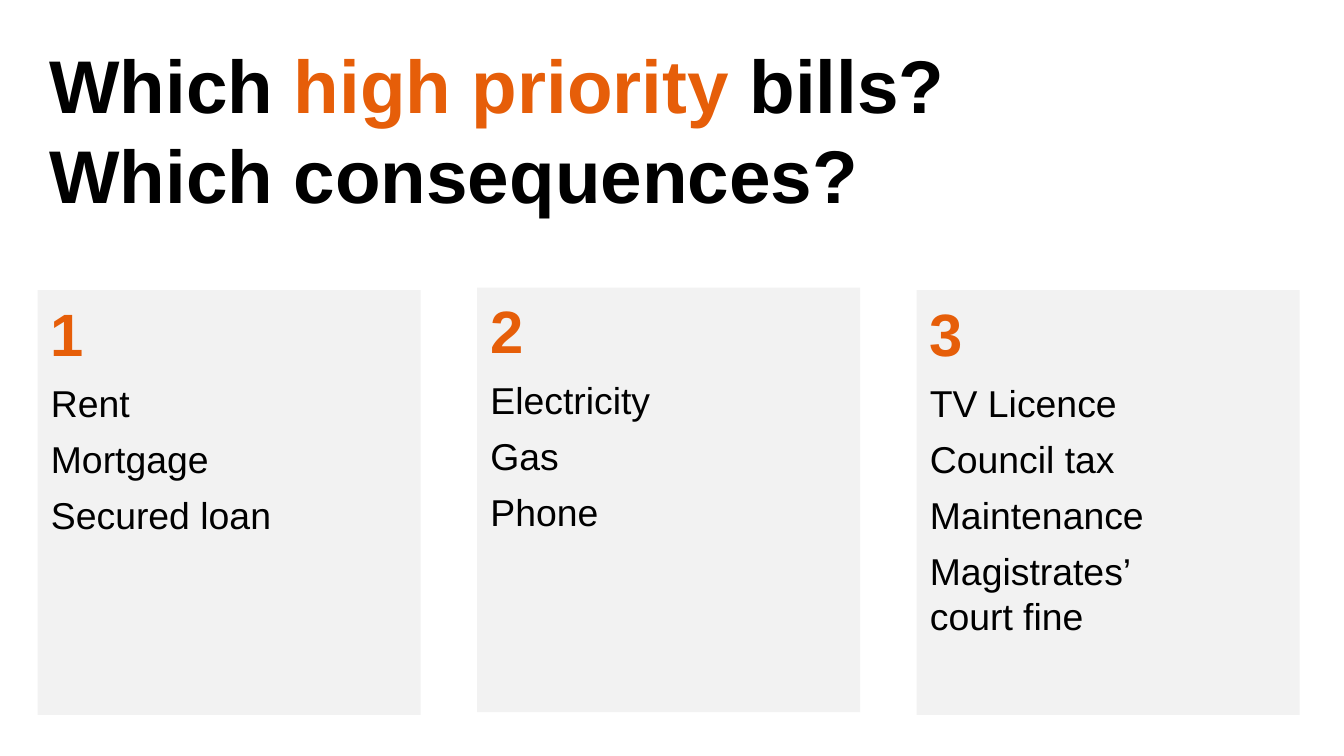
from pptx import Presentation
from pptx.dml.color import RGBColor
from pptx.enum.shapes import MSO_SHAPE
from pptx.enum.text import MSO_ANCHOR, PP_ALIGN
from pptx.util import Inches, Pt

BLACK = RGBColor(0x00, 0x00, 0x00)
ORANGE = RGBColor(0xE6, 0x5E, 0x09)
PALE_GREY = RGBColor(0xF2, 0xF2, 0xF2)

TITLE_FORMAT = {"name": "Arial", "size": Pt(40), "bold": True}
NUMBER_FORMAT = {"name": "Arial", "size": Pt(32), "bold": True}
BILL_FORMAT = {"name": "Arial", "size": Pt(20), "bold": False}

TITLE_PARTS = [
    ("Which ", BLACK),
    ("high priority ", ORANGE),
    ("bills? Which consequences?", BLACK),
]
# Top of each card in inches, then its bills; \v is a line break
CARDS = [
    (2.16, ["Rent", "Mortgage", "Secured loan"]),
    (2.14, ["Electricity", "Gas", "Phone"]),
    (2.16, ["TV Licence", "Council tax", "Maintenance", "Magistrates’ \vcourt fine"]),
]
CARD_LEFT, CARD_PITCH = 0.28, 3.27
CARD_WIDTH, CARD_HEIGHT = 2.85, 3.16


def format_font(font, values, color):
    for attribute, value in values.items():
        setattr(font, attribute, value)
    font.color.rgb = color


def prepare_frame(frame):
    frame.word_wrap = True
    frame.vertical_anchor = MSO_ANCHOR.TOP


def format_paragraph(paragraph, space_before=0):
    paragraph.alignment = PP_ALIGN.LEFT
    paragraph.space_before = Pt(space_before)


def add_title(slide):
    box = slide.shapes.add_textbox(Inches(0.27), Inches(0.24), Inches(7.97), Inches(3.4))
    prepare_frame(box.text_frame)
    heading = box.text_frame.paragraphs[0]
    format_paragraph(heading)
    for words, color in TITLE_PARTS:
        part = heading.add_run()
        part.text = words
        format_font(part.font, TITLE_FORMAT, color)


def add_card(slide, number, top, bills):
    """Add a grey panel with its number above a list of bills."""
    left = CARD_LEFT + (number - 1) * CARD_PITCH
    card = slide.shapes.add_shape(
        MSO_SHAPE.RECTANGLE,
        Inches(left), Inches(top), Inches(CARD_WIDTH), Inches(CARD_HEIGHT),
    )
    card.shadow.inherit = False
    card.fill.solid()
    card.fill.fore_color.rgb = PALE_GREY
    card.line.fill.background()

    frame = card.text_frame
    prepare_frame(frame)
    heading = frame.paragraphs[0]
    heading.text = str(number)
    format_paragraph(heading)
    format_font(heading.font, NUMBER_FORMAT, ORANGE)
    for bill in bills:
        entry = frame.add_paragraph()
        entry.text = bill
        format_paragraph(entry, space_before=6)
        format_font(entry.font, BILL_FORMAT, BLACK)


def main():
    presentation = Presentation()
    presentation.slide_width = Inches(10)
    presentation.slide_height = Inches(5.625)
    slide = presentation.slides.add_slide(presentation.slide_layouts[6])
    add_title(slide)
    for number, (top, bills) in enumerate(CARDS, start=1):
        add_card(slide, number, top, bills)
    presentation.save("out.pptx")


if __name__ == "__main__":
    main()
